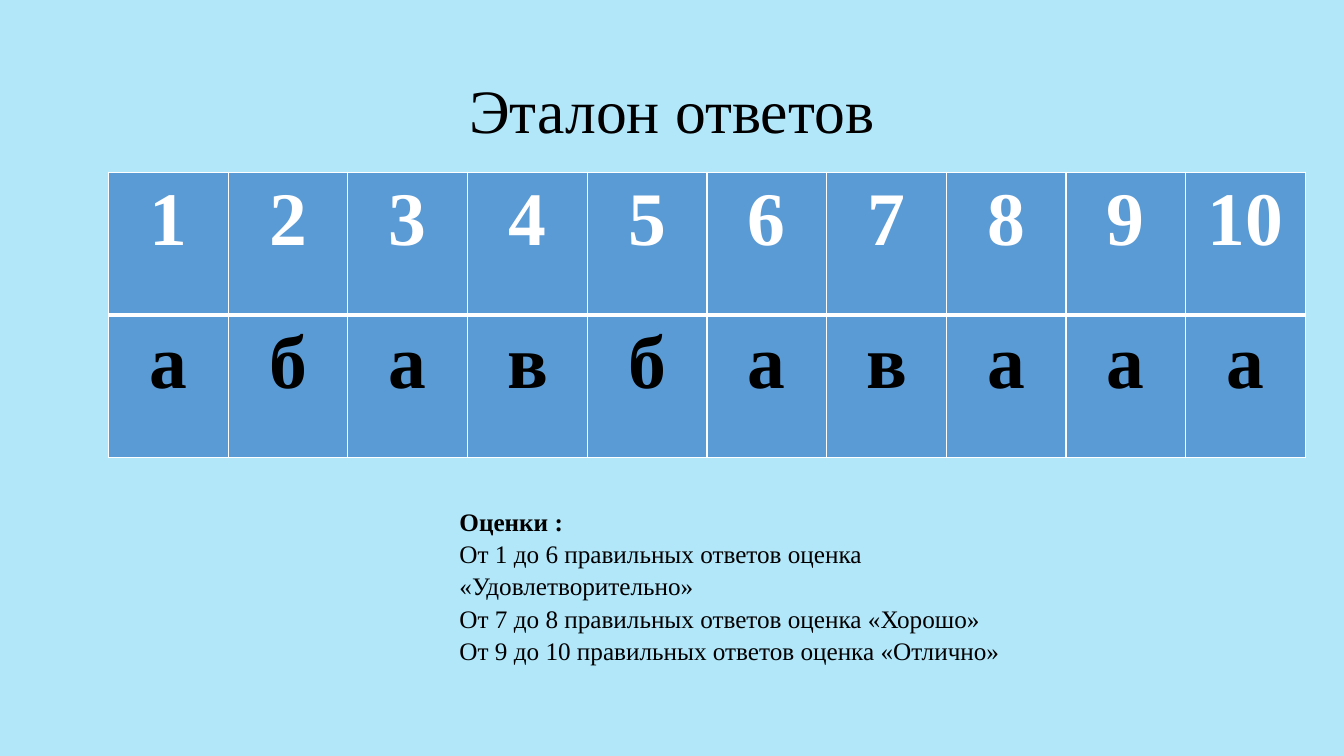
from lxml.etree import SubElement
from pptx import Presentation
from pptx.dml.color import RGBColor
from pptx.enum.text import MSO_ANCHOR, MSO_AUTO_SIZE, PP_ALIGN
from pptx.oxml.ns import qn
from pptx.util import Pt

SKY = RGBColor(0xB2, 0xE7, 0xFA)
BLUE = RGBColor(0x5B, 0x9B, 0xD5)
WHITE = RGBColor(0xFF, 0xFF, 0xFF)
BLACK = RGBColor(0, 0, 0)

ANSWERS = "абавбавааа"
GRADES = [
    "Оценки :",
    "От 1 до 6 правильных ответов оценка «Удовлетворительно»",
    "От 7 до 8 правильных ответов оценка «Хорошо»",
    "От 9 до 10 правильных ответов оценка «Отлично»",
]


class SlideBuilder:
    font = "Times New Roman"

    def __init__(self, prs):
        self.s = prs.slides.add_slide(prs.slide_layouts[6])
        fill = self.s.background.fill
        fill.solid()
        fill.fore_color.rgb = SKY

    def add_text(self, p, text, size, color=BLACK, bold=False,
                 align=PP_ALIGN.LEFT, spacing=1.07):
        p.alignment = align
        p.line_spacing = spacing
        r = p.add_run()
        r.text = text
        r.font.name = self.font
        r.font.size = Pt(size)
        r.font.bold = bold
        r.font.color.rgb = color

    def text_box(self, x, y, w, h):
        sp = self.s.shapes.add_textbox(Pt(x), Pt(y), Pt(w), Pt(h))
        tf = sp.text_frame
        tf.word_wrap = True
        return tf

    def title(self, text, x, y, w, h):
        tf = self.text_box(x, y, w, h)
        tf.vertical_anchor = MSO_ANCHOR.MIDDLE
        self.add_text(tf.paragraphs[0], text, 44, align=PP_ALIGN.CENTER, spacing=0.9)

    def grades(self, lines, x, y, w, h, indent):
        tf = self.text_box(x, y, w, h)
        tf.auto_size = MSO_AUTO_SIZE.SHAPE_TO_FIT_TEXT
        for i, line in enumerate(lines):
            p = tf.add_paragraph() if i else tf.paragraphs[0]
            pPr = p._p.get_or_add_pPr()
            pPr.set("marL", str(Pt(indent)))
            pPr.set("indent", "0")
            self.add_text(p, line, 18, bold=i == 0)

    def borders(self, cell, **widths):
        """Draw white cell borders; widths are keyed by side: L, R, T, B."""
        tcPr = cell._tc.get_or_add_tcPr()
        for side, width in widths.items():
            ln = SubElement(tcPr, qn(f"a:ln{side}"), w=str(Pt(width)))
            fill = SubElement(ln, qn("a:solidFill"))
            SubElement(fill, qn("a:srgbClr"), val=str(WHITE))

    def answer_table(self, answers, x, y, w, h):
        rows = [[str(n + 1) for n in range(len(answers))], answers]
        table = self.s.shapes.add_table(
            len(rows), len(answers), Pt(x), Pt(y), Pt(w), Pt(h)).table
        for i, row in enumerate(rows):
            for j, text in enumerate(row):
                cell = table.cell(i, j)
                cell.margin_left = cell.margin_right = Pt(5.4)
                cell.margin_top = cell.margin_bottom = 0
                self.borders(cell, L=1, R=1, T=3 if i else 1, B=1 if i else 3)
                cell.fill.solid()
                cell.fill.fore_color.rgb = BLUE
                self.add_text(cell.text_frame.paragraphs[0], text, 54,
                              BLACK if i else WHITE, True, PP_ALIGN.CENTER)


def main():
    prs = Presentation()
    prs.slide_width, prs.slide_height = Pt(960), Pt(540)
    slide = SlideBuilder(prs)
    slide.title("Эталон ответов", 66, 28.75, 828, 104.4)
    slide.answer_table(ANSWERS, 77.5, 123, 855, 204)
    slide.grades(GRADES, 281.5, 356.4, 480, 124, indent=39.6)
    prs.save("out.pptx")


if __name__ == "__main__":
    main()
